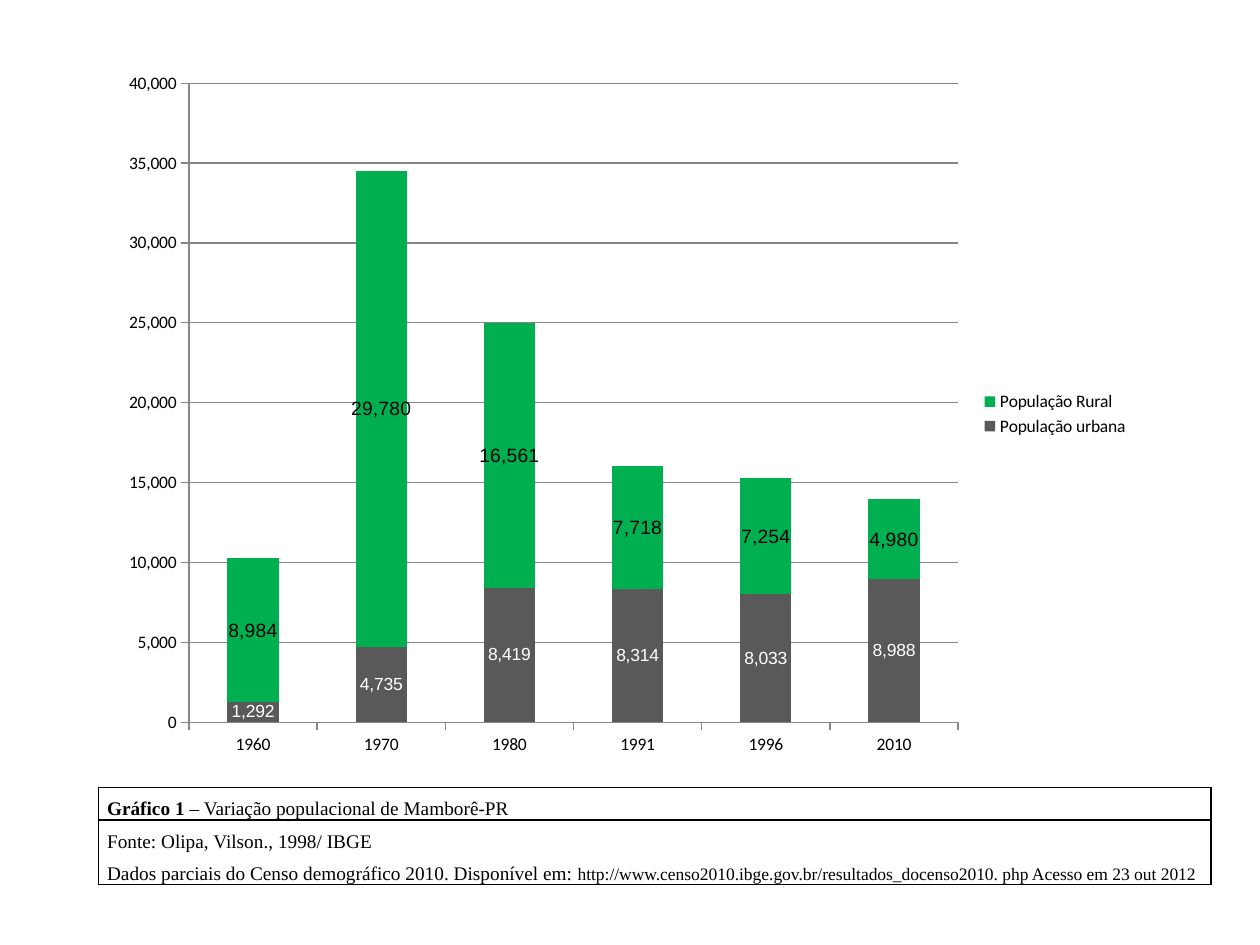
from lxml.etree import SubElement
from pptx import Presentation
from pptx.chart.data import CategoryChartData
from pptx.dml.color import RGBColor
from pptx.enum.chart import XL_CHART_TYPE as ChartType
from pptx.enum.chart import XL_LABEL_POSITION as LabelPosition
from pptx.enum.chart import XL_LEGEND_POSITION as LegendPosition
from pptx.enum.chart import XL_TICK_MARK as TickMark
from pptx.oxml.ns import qn
from pptx.util import Pt

PX = 9144
COLORS = {"black": "000000", "white": "FFFFFF", "urban": "595959",
          "rural": "00B050", "axis": "868686"}
YEARS = ["1960", "1970", "1980", "1991", "1996", "2010"]
SERIES = [
    ("População urbana", [1292, 4735, 8419, 8314, 8033, 8988], "urban", "white", 10),
    ("População Rural", [8984, 29780, 16561, 7718, 7254, 4980], "rural", "black", 11),
]
CAPTION_ROWS = [
    (26, [[("Gráfico 1", 11, True),
           (" – Variação populacional de Mamborê-PR", 11, False)]]),
    (51, [[("Fonte: Olipa, Vilson., 1998/ IBGE", 11, False)],
          [("Dados parciais do Censo demográfico 2010. Disponível em: ", 11, False),
           ("http://www.censo2010.ibge.gov.br/resultados_docenso2010. php "
            "Acesso em 23 out 2012", 10, False)]]),
]


def color(name):
    """Return the named colour."""
    return RGBColor.from_string(COLORS[name])


def style_font(font, name, size, color_name, bold=False):
    """Set face, size, colour and weight of a font."""
    font.name, font.size, font.bold = name, Pt(size), bold
    font.color.rgb = color(color_name)


def style_line(line, color_name):
    """Give a chart line its colour and width."""
    line.color.rgb = color(color_name)
    line.width = Pt(0.75)


def add_population_chart(slide, left, top, width, height):
    """Add the stacked columns of urban and rural population."""
    data = CategoryChartData(number_format="#,##0")
    data.categories = YEARS
    for name, values, *_ in SERIES:
        data.add_series(name, values)
    frame = slide.shapes.add_chart(ChartType.COLUMN_STACKED, left * PX, top * PX,
                                   width * PX, height * PX, data)
    chart = frame.chart
    style_font(chart.font, "Calibri", 10, "black")
    chart.has_title = False
    chart.has_legend = True
    chart.legend.position = LegendPosition.RIGHT
    chart.legend.include_in_layout = False

    for axis in (chart.category_axis, chart.value_axis):
        axis.major_tick_mark = TickMark.OUTSIDE
        axis.minor_tick_mark = TickMark.NONE
        style_line(axis.format.line, "axis")
    value_axis = chart.value_axis
    value_axis.minimum_scale, value_axis.maximum_scale = 0, 40000
    value_axis.major_unit = 5000
    value_axis.has_major_gridlines = True
    style_line(value_axis.major_gridlines.format.line, "axis")
    value_axis.tick_labels.number_format = "#,##0"
    value_axis.tick_labels.number_format_is_linked = False

    plot = chart.plots[0]
    plot.gap_width, plot.overlap = 150, 100
    plot.vary_by_categories = False
    for series, (_, _, fill_color, label_color, size) in zip(plot.series, SERIES):
        series.format.fill.solid()
        series.format.fill.fore_color.rgb = color(fill_color)
        labels = series.data_labels
        labels.show_value = True
        labels.position = LabelPosition.CENTER
        style_font(labels.font, "Arial", size, label_color)


def outline_cell(cell):
    """Draw a thin black border on all sides of a cell."""
    properties = cell._tc.get_or_add_tcPr()
    for index, side in enumerate(("lnL", "lnR", "lnT", "lnB")):
        line = SubElement(properties, qn(f"a:{side}"), w=str(Pt(1)))
        fill = SubElement(line, qn("a:solidFill"))
        SubElement(fill, qn("a:srgbClr"), val=COLORS["black"])
        properties.insert(index, line)


def add_caption_table(slide, left, top, width):
    """Add the bordered table with the chart's caption and source."""
    height = sum(row_height for row_height, _ in CAPTION_ROWS)
    frame = slide.shapes.add_table(len(CAPTION_ROWS), 1, left * PX, top * PX,
                                   width * PX, height * PX)
    table = frame.table
    table.first_row = table.horz_banding = False
    for row, (row_height, paragraphs) in zip(table.rows, CAPTION_ROWS):
        row.height = row_height * PX
        cell = row.cells[0]
        cell.margin_left = cell.margin_right = 7 * PX
        cell.margin_top = cell.margin_bottom = 0
        cell.fill.background()
        outline_cell(cell)
        text_frame = cell.text_frame
        for index, runs in enumerate(paragraphs):
            paragraph = text_frame.add_paragraph() if index else text_frame.paragraphs[0]
            paragraph.line_spacing = 1.5
            for text, size, bold in runs:
                run = paragraph.add_run()
                run.text = text
                style_font(run.font, "Times New Roman", size, "black", bold)


def main():
    """Build the slide and save it."""
    presentation = Presentation()
    presentation.slide_width, presentation.slide_height = 1000 * PX, 750 * PX
    slide = presentation.slides.add_slide(presentation.slide_layouts[6])
    add_caption_table(slide, 78, 625, 883)
    add_population_chart(slide, 86, 47, 820, 563)
    presentation.save("out.pptx")


if __name__ == "__main__":
    main()
